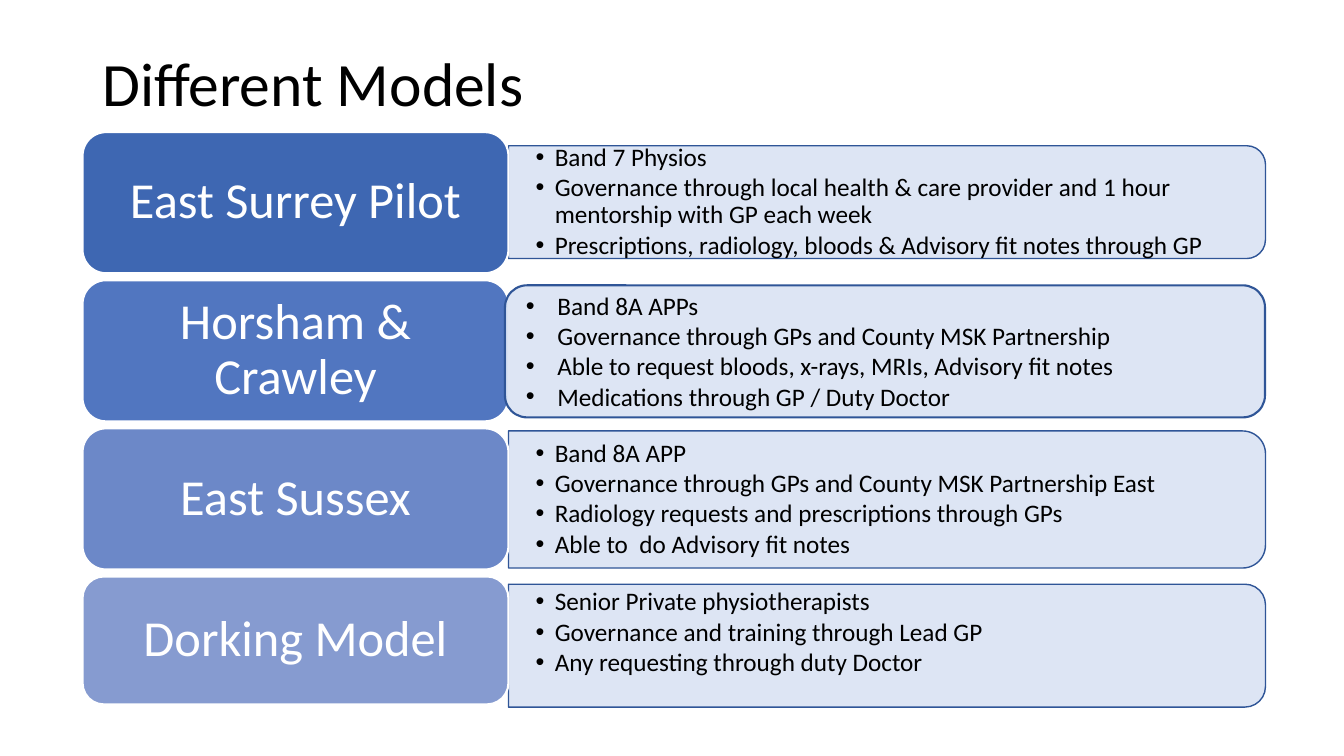
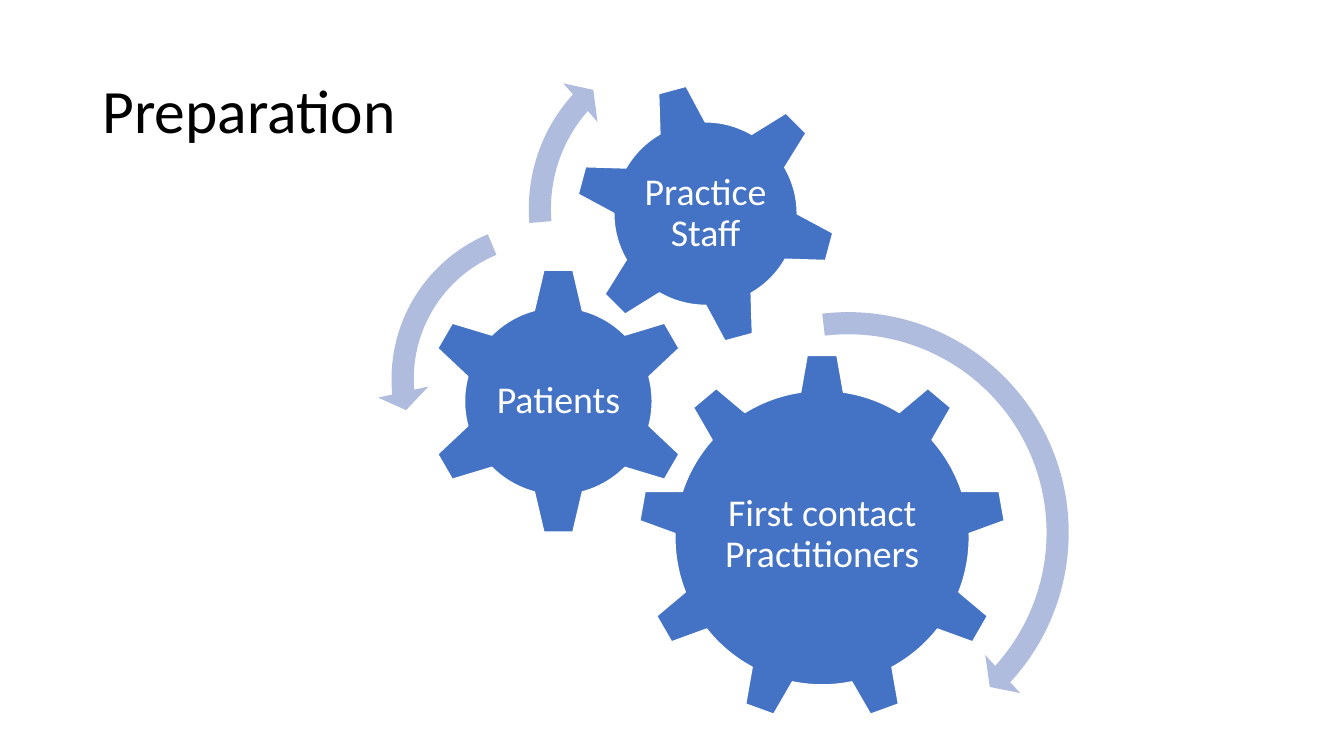
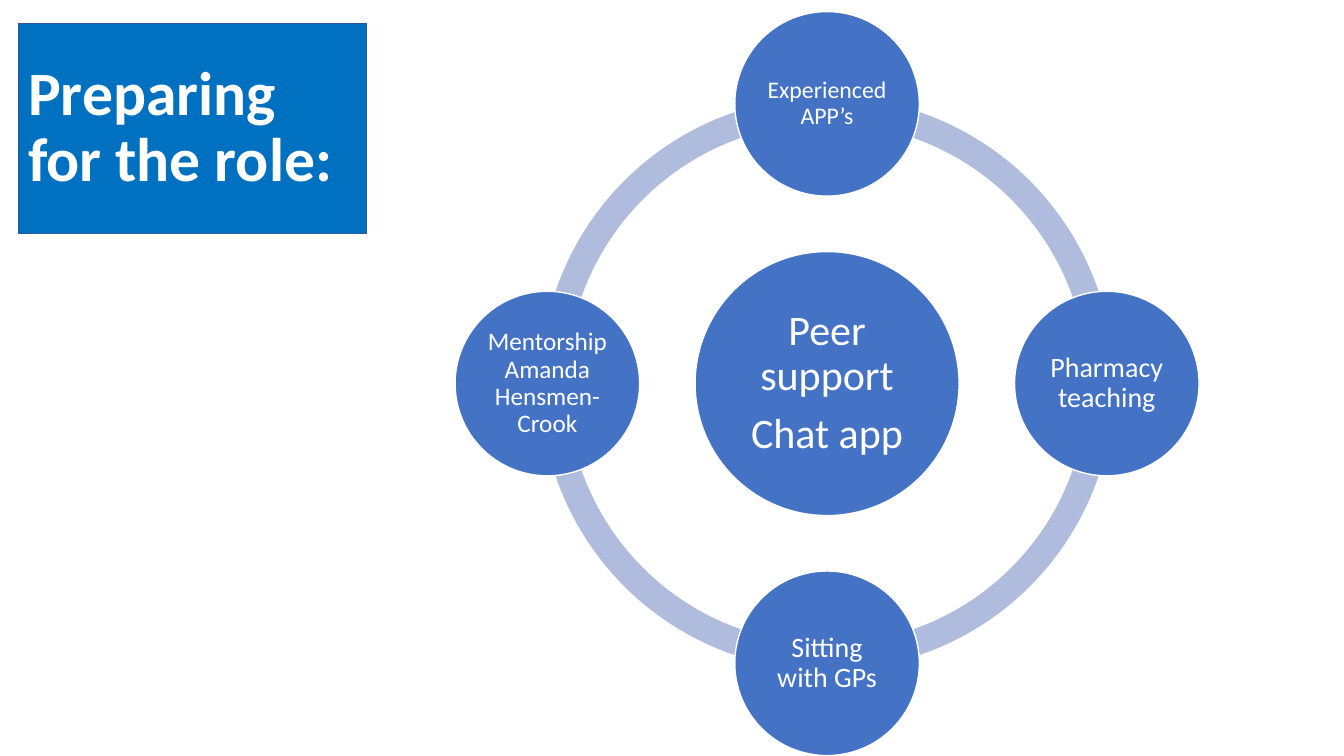
from dataclasses import dataclass
from math import cos, radians, sin

from lxml.etree import SubElement
from pptx import Presentation
from pptx.dml.color import RGBColor
from pptx.enum.shapes import MSO_SHAPE as SHAPE
from pptx.enum.text import MSO_ANCHOR, PP_ALIGN
from pptx.oxml.ns import qn
from pptx.util import Pt


@dataclass(frozen=True)
class Theme:
    font: str = "Calibri"
    black: str = "000000"
    white: str = "FFFFFF"
    blue: str = "4472C4"
    pale: str = "B0BCDE"
    panel: str = "DAE3F3"
    edge: str = "2F5597"
    banner: str = "0070C0"
    labels: tuple = ("3E67B2", "5176C0", "6C88C8", "869BD0")
    title: int = 44
    label: int = 36
    hub: int = 30
    gear: int = 27
    body: int = 18


T = Theme()


def shape(s, kind, x, y, w, h, fill, line=None, weight=1, adj=(), alpha=None, rot=0):
    sp = s.shapes.add_shape(kind, Pt(x), Pt(y), Pt(w), Pt(h))
    sp.shadow.inherit = False
    sp.rotation = rot
    sp.fill.solid()
    sp.fill.fore_color.rgb = RGBColor.from_string(fill)
    if alpha:
        clr = sp._element.spPr.find(qn("a:solidFill"))[0]
        SubElement(clr, qn("a:alpha"), val=str(alpha * 1000))
    if line:
        sp.line.color.rgb = RGBColor.from_string(line)
        sp.line.width = Pt(weight)
    else:
        sp.line.fill.background()
    for i, value in enumerate(adj):
        sp.adjustments[i] = value
    return sp


def write(sp, lines, size, color=T.white, align=PP_ALIGN.CENTER, bold=False,
          inset=(7.2, 3.6, 7.2, 3.6), spacing=0.9, after=0.3, indent=0):
    """Fill sp with paragraphs; after is a share of size, indent adds bullets."""
    tf = sp.text_frame
    tf.word_wrap = True
    tf.vertical_anchor = MSO_ANCHOR.MIDDLE
    tf.margin_left, tf.margin_top, tf.margin_right, tf.margin_bottom = map(Pt, inset)
    for i, line in enumerate(lines):
        p = tf.add_paragraph() if i else tf.paragraphs[0]
        p.alignment = align
        p.line_spacing = spacing
        p.space_after = Pt(round(after * size, 1))
        if indent:
            pPr = p._p.get_or_add_pPr()
            pPr.set("marL", str(Pt(indent)))
            pPr.set("indent", str(-Pt(indent)))
            SubElement(pPr, qn("a:buFont"), typeface="Arial")
            SubElement(pPr, qn("a:buChar"), char="•")
        r = p.add_run()
        r.text = line
        r.font.name = T.font
        r.font.size = Pt(size)
        r.font.bold = bold
        r.font.color.rgb = RGBColor.from_string(color)


prs = Presentation()
prs.slide_width, prs.slide_height = Pt(960), Pt(540)
models, preparation, role = [prs.slides.add_slide(prs.slide_layouts[6]) for _ in range(3)]

for s, title, height in ((models, "Different Models", 65.5), (preparation, "Preparation", 104.4)):
    tb = s.shapes.add_textbox(Pt(66), Pt(28.8), Pt(828), Pt(height))
    write(tb, [title], T.title, T.black, PP_ALIGN.LEFT, after=0)

# Slide 1: a label and a bullet panel per model
s = models
bullets = dict(size=T.body, color=T.black, align=PP_ALIGN.LEFT)
panel_look = dict(fill=T.panel, line=T.edge, alpha=90)
panel_x, panel_w = 363.2, 540.7
panels = (
    (144.4, 80.6, 10, ["Band 7 Physios",
                       "Governance through local health & care provider and 1 hour "
                       "mentorship with GP each week",
                       "Prescriptions, radiology, bloods & Advisory fit notes through GP"]),
    (356.8, 97.9, 10, ["Band 8A APP",
                       "Governance through GPs and County MSK Partnership East",
                       "Radiology requests and prescriptions through GPs",
                       "Able to  do Advisory fit notes"]),
    (461.2, 87.8, 28, ["Senior Private physiotherapists",
                       "Governance and training through Lead GP",
                       "Any requesting through duty Doctor"]),
)
for mid, h, bottom, lines in panels:
    # The turned shape puts its two round corners on the right
    shape(s, SHAPE.ROUND_2_SAME_RECTANGLE, panel_x + (panel_w - h) / 2, mid - panel_w / 2,
          h, panel_w, rot=90, **panel_look)
    tb = s.shapes.add_textbox(Pt(panel_x), Pt(mid - h / 2), Pt(panel_w - 4), Pt(h))
    write(tb, lines, inset=(19.4, 10, 19.4, bottom), after=0.12, indent=13.7, **bullets)

names = ("East Surrey Pilot", "Horsham & Crawley", "East Sussex", "Dorking Model")
for i, (name, color) in enumerate(zip(names, T.labels)):
    h = 91.4 if name == names[-1] else 100.8
    sp = shape(s, SHAPE.ROUNDED_RECTANGLE, 59, 94.4 + 105.8 * i, 304.2, h, color, T.white, 1.5)
    write(sp, [name], T.label, inset=(10.8, 5, 10.8, 5))

shape(s, SHAPE.ROUNDED_RECTANGLE, 360.7, 203.8, 542.9, 94.3, weight=1.5, **panel_look)
tb = s.shapes.add_textbox(Pt(368.6), Pt(203.3), Pt(532), Pt(94.3))
write(tb, ["Band 8A APPs",
           "Governance through GPs and County MSK Partnership",
           "Able to request bloods, x-rays, MRIs, Advisory fit notes",
           "Medications through GP / Duty Doctor"],
      spacing=1, after=0, indent=22.5, **bullets)

# Slide 2: three gears and their turning arrows
s = preparation
gears = (
    ("First contact Practitioners", SHAPE.GEAR_9, 587.2, 384.1, 262.8, 0, 157, 2),
    ("Patients", SHAPE.GEAR_6, 398.9, 286.6, 191.5, 0, 95, 0),
    ("Practice Staff", SHAPE.GEAR_6, 504, 152.6, 187.2, 345, 105, 0),
)
for name, kind, cx, cy, size, rot, w, lift in gears:
    shape(s, kind, cx - size / 2, cy - size / 2, size, size, T.blue, T.white, rot=rot)
    tb = s.shapes.add_textbox(Pt(cx - w / 2), Pt(cy - 50 - lift), Pt(w), Pt(100))
    write(tb, [name], T.gear, inset=(3, 3, 3, 3))

arrows = (
    (SHAPE.CIRCULAR_ARROW, 437.8, 212.4, 336.2, (0.047, 2.99, 25.48, 157.94, 0.055)),
    (SHAPE.LEFT_CIRCULAR_ARROW, 269.3, 148.3, 244.8, (0.065, 4.3, 104.89, 148.38, 0.075)),
    (SHAPE.CIRCULAR_ARROW, 367.2, 17.3, 263.5, (0.06, 3.94, 133.14, 105.08, 0.07)),
)
for kind, x, y, size, adj in arrows:
    shape(s, kind, x, y, size, size, T.pale, adj=adj)

# Slide 3: a ring of four circles around a hub
s = role
sp = shape(s, SHAPE.RECTANGLE, 13, 16.5, 249.1, 150.5, T.banner, T.edge, 0.75)
write(sp, ["Preparing for the role:"], T.title, align=PP_ALIGN.LEFT, bold=True, after=0)

cx, cy, orbit, ring = 590.8, 274, 199.8, 409.7
quarter = 54  # 90 degrees in adjustment units
for q in range(4):
    shape(s, SHAPE.BLOCK_ARC, cx - ring / 2, cy - ring / 2, ring, ring, T.pale,
          adj=(q * quarter, (q + 1) % 4 * quarter, 0.046))

circles = [(cx, cy, 188.6, ["Peer support", "Chat app"], T.hub)]
satellites = (("Experienced APP’s", 17), ("Pharmacy teaching", 20),
              ("Sitting with GPs", 20), ("Mentorship Amanda Hensmen-Crook", 18))
for i, (name, size) in enumerate(satellites):
    angle = radians(90 * i - 90)
    circles.append((cx + orbit * cos(angle), cy + orbit * sin(angle), 131.8, [name], size))
for x, y, d, lines, size in circles:
    sp = shape(s, SHAPE.OVAL, x - d / 2, y - d / 2, d, d, T.blue, T.white)
    write(sp, lines, size, inset=(2, 2, 2, 2))

prs.save("out.pptx")
